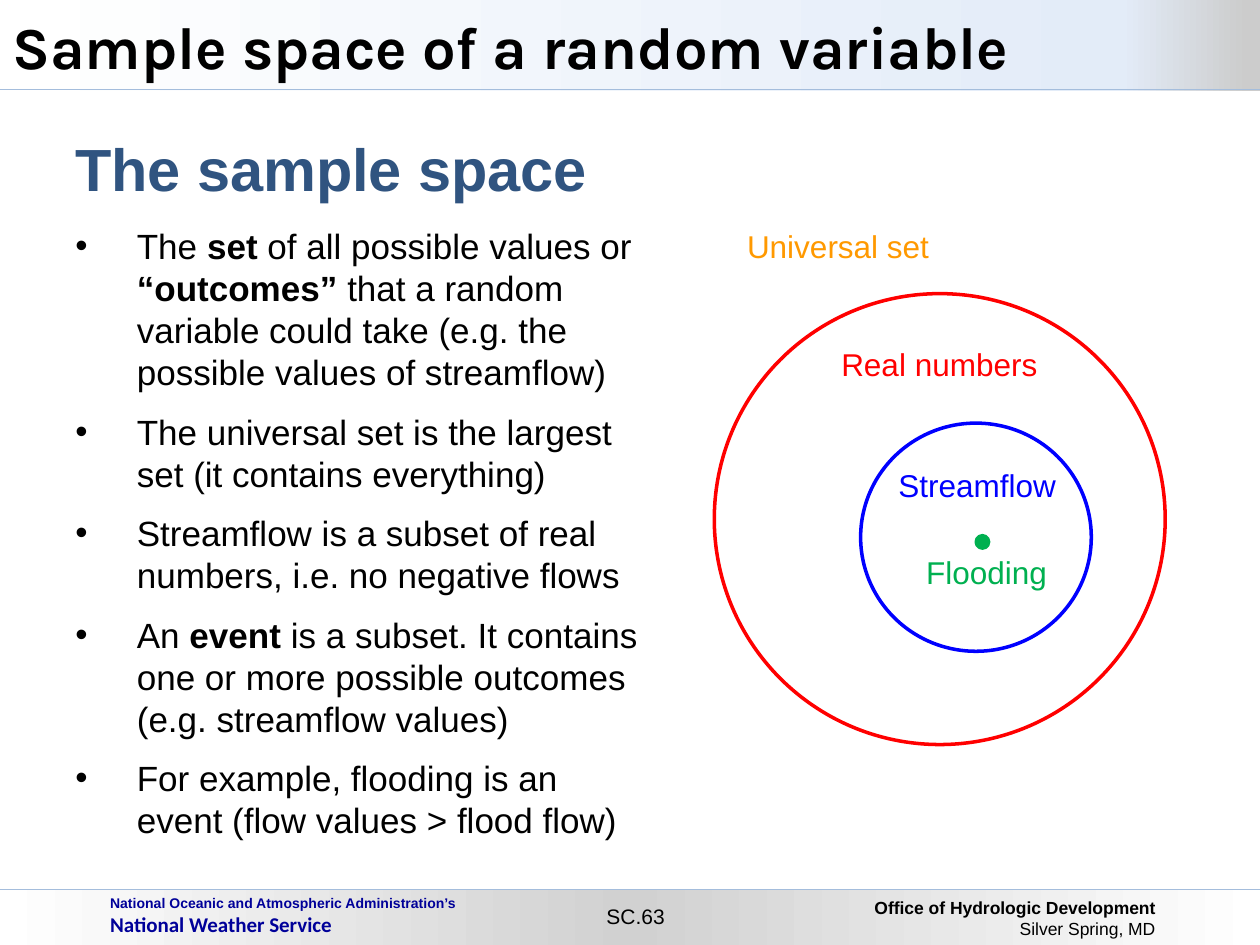
from copy import deepcopy
from typing import NamedTuple

from lxml import etree
from pptx import Presentation, util as u
from pptx.dml.color import RGBColor
from pptx.enum import shapes as sh, text as tx
from pptx.oxml.ns import qn

HUES = {
    "black": "000000", "white": "FFFFFF", "navy": "000099", "steel": "305480",
    "rule": "A4BDDC", "grey": "D1D1D1", "pale": "E3ECF8", "ash": "CCCCCC",
    "red": "FF0000", "blue": "0000FF", "green": "00B050", "orange": "FF9900",
}
LEFT, MID, RIGHT = tx.PP_ALIGN.LEFT, tx.PP_ALIGN.CENTER, tx.PP_ALIGN.RIGHT


class Box(NamedTuple):
    x: float
    y: float
    w: float
    h: float


class Line(NamedTuple):
    """One paragraph; the parts between asterisks are bold."""
    words: str
    size: int
    hue: str = "black"
    face: str = "Arial"
    before: int = 0
    dent: float = 0


class Ring(NamedTuple):
    box: Box
    fill: str
    edge: str


class Label(NamedTuple):
    box: Box
    words: str
    hue: str


BODY = [
    ("The *set* of all possible values or *“outcomes”* that a random "
     "variable could take (e.g. the possible values of streamflow)"),
    "The universal set is the largest set (it contains everything)",
    "Streamflow is a subset of real numbers, i.e. no negative flows",
    ("An *event* is a subset. It contains one or more possible outcomes "
     "(e.g. streamflow values)"),
    "For example, flooding is an event (flow values > flood flow)",
]
RINGS = [
    Ring(Box(14.4, 5.92, 9.09, 9.09), "white", "red"),
    Ring(Box(17.35, 8.53, 4.65, 4.6), "white", "blue"),
    Ring(Box(19.68, 10.8, 0.25, 0.25), "green", "green"),
]
LABELS = [
    Label(Box(14.81, 4.45, 4.22, 1.02), "Universal set", "orange"),
    Label(Box(16.71, 6.83, 4.5, 1.02), "Real numbers", "red"),
    Label(Box(17.86, 9.27, 3.71, 1.02), "Streamflow", "blue"),
    Label(Box(18.42, 11.02, 2.97, 1.02), "Flooding", "green"),
]


def rgb(hue: str) -> RGBColor:
    return RGBColor.from_string(HUES[hue])


def style(item, form: dict) -> None:
    for name, value in form.items():
        setattr(item, name, value)


def add_shape(slide, kind, box: Box, fill: str = ""):
    """Draw a preset shape without shadow, plain filled if a fill is named."""
    shape = slide.shapes.add_shape(kind, *map(u.Cm, box))
    shape.shadow.inherit = False
    shape.line.fill.background()
    if fill:
        shape.fill.solid()
        shape.fill.fore_color.rgb = rgb(fill)
    return shape


def add_band(slide, box: Box, stops: list) -> None:
    """Draw a bar with a left-to-right gradient of three stops."""
    bar = add_shape(slide, sh.MSO_SHAPE.RECTANGLE, box)
    bar.fill.gradient()
    bar.fill.gradient_angle = 0
    group = bar.fill._xPr.find(".//" + qn("a:gsLst"))
    group.append(deepcopy(group[0]))
    for stop, (spot, hue) in zip(bar.fill.gradient_stops, stops):
        stop.position = spot
        stop.color.rgb = rgb(hue)


def add_rule(slide, y: float) -> None:
    rule = slide.shapes.add_connector(
        sh.MSO_CONNECTOR.STRAIGHT, u.Cm(25.4), u.Cm(y), 0, u.Cm(y))
    etree.SubElement(rule._element.spPr, qn("a:effectLst"))
    rule.line.width = u.Pt(0.75)
    rule.line.color.rgb = rgb("rule")


def add_ring(slide, ring: Ring) -> None:
    oval = add_shape(slide, sh.MSO_SHAPE.OVAL, ring.box, ring.fill)
    oval.line.width = u.Pt(2)
    oval.line.color.rgb = rgb(ring.edge)


def add_dot(para, dent: float) -> None:
    """Give the paragraph a bullet with a hanging indent."""
    props = para._p.get_or_add_pPr()
    props.set("marL", str(u.Cm(dent)))
    props.set("indent", str(-u.Cm(dent)))
    etree.SubElement(props, qn("a:buFont"), typeface="Arial")
    etree.SubElement(props, qn("a:buChar"), char="•")


def write(shape, lines: list, align=LEFT, **form) -> None:
    frame = shape.text_frame
    style(frame, {"word_wrap": True, **form})
    for i, line in enumerate(lines):
        para = frame.add_paragraph() if i else frame.paragraphs[0]
        if line.dent:
            add_dot(para, line.dent)
        para.alignment = align
        if line.before:
            para.space_before = u.Pt(line.before)
        for j, part in enumerate(line.words.split("*")):
            if part:
                run = para.add_run()
                run.text = part
                style(run.font, {"name": line.face, "size": u.Pt(line.size),
                                 "bold": j % 2 == 1})
                run.font.color.rgb = rgb(line.hue)


def add_text(slide, box: Box, lines: list, align=LEFT, **form) -> None:
    write(slide.shapes.add_textbox(*map(u.Cm, box)), lines, align, **form)


def add_foot(slide) -> None:
    add_rule(slide, 17.93)
    add_band(slide, Box(0, 17.95, 25.4, 1.1),
             [(0, "white"), (0.5, "grey"), (1, "white")])
    add_text(slide, Box(17.5, 17.95, 5.92, 1.1),
             [Line("*Office of Hydrologic Development*", 10),
              Line("Silver Spring, MD", 10)], RIGHT,
             margin_left=u.Cm(0.03), margin_right=u.Cm(0.13))
    add_text(slide, Box(1.97, 17.91, 8.46, 1.09),
             [Line("*National Oceanic and Atmospheric Administration’s*", 8, "navy"),
              Line("*National Weather Service*", 12, "navy", "Calibri")])
    add_text(slide, Box(11.94, 18.08, 1.75, 0.76), [Line("SC.63", 12)], MID,
             word_wrap=False)


def add_head(slide) -> None:
    bar = Box(0, 0, 25.4, 1.83)
    add_band(slide, bar, [(0, "white"), (0.89, "pale"), (0.99, "ash")])
    add_rule(slide, 1.8)
    add_text(slide, bar,
             [Line("*Sample space of a random variable*", 34, face="Karla")],
             vertical_anchor=tx.MSO_ANCHOR.MIDDLE)


def add_body(slide) -> None:
    panel = add_shape(slide, sh.MSO_SHAPE.RECTANGLE,
                      Box(1.27, 2.54, 12.12, 14.4), "white")
    points = [Line(words, 20, before=10 if i else 12, dent=1.24)
              for i, words in enumerate(BODY)]
    write(panel, [Line("*The sample space*", 34, "steel"), *points],
          vertical_anchor=tx.MSO_ANCHOR.TOP)


def main() -> None:
    deck = Presentation()
    style(deck, {"slide_width": u.Cm(25.4), "slide_height": u.Cm(19.05)})
    slide = deck.slides.add_slide(deck.slide_layouts[6])
    add_foot(slide)
    add_head(slide)
    for ring in RINGS:
        add_ring(slide, ring)
    for box, words, hue in LABELS:
        add_text(slide, box, [Line(words, 18, hue)], word_wrap=False)
    add_body(slide)
    deck.save("out.pptx")


if __name__ == "__main__":
    main()
